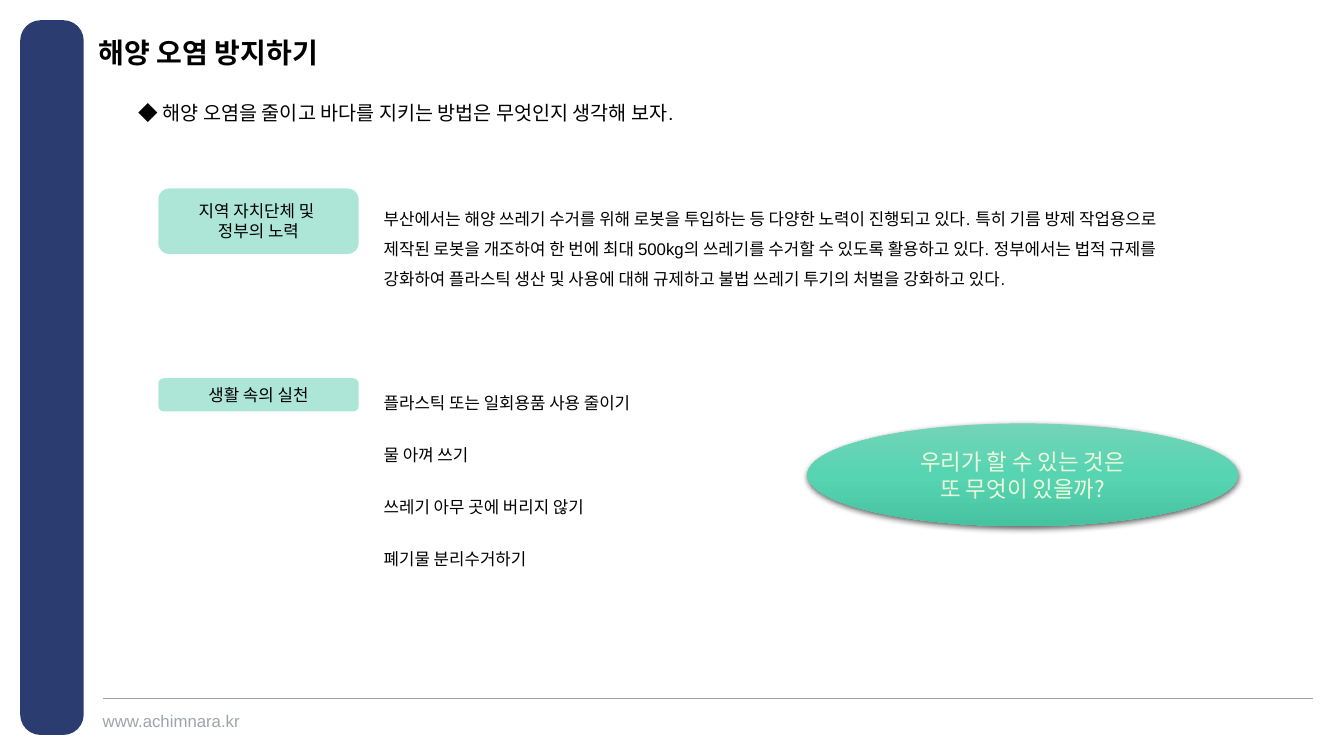
from lxml.etree import SubElement
from pptx import Presentation
from pptx.dml.color import RGBColor
from pptx.enum.shapes import MSO_CONNECTOR, MSO_SHAPE
from pptx.enum.text import MSO_ANCHOR, MSO_AUTO_SIZE, PP_ALIGN
from pptx.oxml.ns import qn
from pptx.util import Cm, Pt

COLOURS = {
    "navy": "2B3C71",
    "grey": "9EA4AA",
    "black": "000000",
    "mint": "5DCEAF",
    "cream": "EDFBDC",
    "oval_top": "73D4B8",
    "oval_middle": "57D4B2",
    "oval_bottom": "47C3A1",
}
KOREAN_FONT = "Noto Sans CJK KR"
HABITS = [
    "플라스틱 또는 일회용품 사용 줄이기",
    "물 아껴 쓰기",
    "쓰레기 아무 곳에 버리지 않기",
    "폐기물 분리수거하기",
]
EFFORTS = (
    "부산에서는 해양 쓰레기 수거를 위해 로봇을 투입하는 등 다양한 노력이 진행되고 있다. "
    "특히 기름 방제 작업용으로 제작된 로봇을 개조하여 한 번에 최대 500kg의 쓰레기를 "
    "수거할 수 있도록 활용하고 있다. 정부에서는 법적 규제를 강화하여 플라스틱 생산 및 "
    "사용에 대해 규제하고 불법 쓰레기 투기의 처벌을 강화하고 있다."
)


def colour(name):
    """Return the named palette colour."""
    return RGBColor.from_string(COLOURS[name])


def add_span(para, text, size, tone, font="Arial", bold=False):
    """Add one styled run to a paragraph."""
    span = para.add_run()
    span.text = text
    span.font.size = Pt(size)
    span.font.bold = bold
    span.font.color.rgb = colour(tone)
    span.font.name = font
    SubElement(span.font._element, qn("a:ea"), typeface=KOREAN_FONT)


def add_text(page, area, text, size, tone="black", spacing=1.5, inset=True, bold=False):
    """Add a wrapped text box holding one paragraph."""
    box = page.shapes.add_textbox(*map(Cm, area))
    frame = box.text_frame
    frame.word_wrap = True
    if inset:
        frame.auto_size = MSO_AUTO_SIZE.SHAPE_TO_FIT_TEXT
    else:
        frame.margin_left = frame.margin_right = frame.margin_top = frame.margin_bottom = 0
    para = frame.paragraphs[0]
    para.line_spacing = spacing
    add_span(para, text, size, tone, bold=bold)


def add_panel(page, kind, area, fill, lines=(), size=12, tone="black"):
    """Add a borderless filled shape with centred lines of text."""
    panel = page.shapes.add_shape(kind, *map(Cm, area))
    panel.shadow.inherit = False
    panel.fill.solid()
    panel.fill.fore_color.rgb = colour(fill)
    panel.line.fill.background()
    frame = panel.text_frame
    frame.word_wrap = True
    frame.vertical_anchor = MSO_ANCHOR.MIDDLE
    for index, line in enumerate(lines):
        para = frame.add_paragraph() if index else frame.paragraphs[0]
        para.alignment = PP_ALIGN.CENTER
        add_span(para, line, size, tone, KOREAN_FONT)
    return panel


def set_alpha(colour_element, percent):
    """Set the opacity of a colour element."""
    SubElement(colour_element, qn("a:alpha"), val=str(percent * 1000))


def add_tag(page, top, height, lines):
    """Add a half-transparent mint section tag."""
    tag = add_panel(page, MSO_SHAPE.ROUNDED_RECTANGLE, (3.99, top, 5.05, height), "mint", lines)
    set_alpha(tag._element.spPr.find(qn("a:solidFill")).find(qn("a:srgbClr")), 50)


def add_question(page, area, lines):
    """Add the shaded oval that poses the closing question."""
    oval = add_panel(page, MSO_SHAPE.OVAL, area, "oval_middle", lines, 16, "cream")
    oval.fill.gradient()
    oval.fill.gradient_angle = 270
    properties = oval._element.spPr
    stops = properties.find(qn("a:gradFill")).find(qn("a:gsLst"))
    for stop in list(stops):
        stops.remove(stop)
    for position, name in enumerate(("oval_top", "oval_middle", "oval_bottom")):
        stop = SubElement(stops, qn("a:gs"), pos=str(position * 50000))
        SubElement(stop, qn("a:srgbClr"), val=COLOURS[name])
    shadow = SubElement(
        properties.find(qn("a:effectLst")), qn("a:outerShdw"),
        blurRad=str(Pt(4.5)), dist=str(Pt(1.5)), dir="5400000", algn="ctr", rotWithShape="0",
    )
    set_alpha(SubElement(shadow, qn("a:srgbClr"), val=COLOURS["black"]), 63)


def add_rule(page, left, right, top):
    """Add the thin horizontal footer rule."""
    rule = page.shapes.add_connector(MSO_CONNECTOR.STRAIGHT, Cm(left), Cm(top), Cm(right), Cm(top))
    rule.line.color.rgb = colour("grey")
    rule.line.width = Pt(0.5)
    SubElement(rule._element.spPr, qn("a:effectLst"))


def main():
    """Build the slide and save the deck."""
    deck = Presentation()
    deck.slide_width, deck.slide_height = Cm(33.87), Cm(19.05)
    page = deck.slides.add_slide(deck.slide_layouts[6])

    sidebar = add_panel(page, MSO_SHAPE.ROUNDED_RECTANGLE, (0.51, 0.51, 1.6, 18.01), "navy")
    sidebar.adjustments[0] = 0.32
    add_rule(page, 2.59, 33.1, 17.6)
    add_text(page, (2.59, 17.91, 3.81, 0.51), "www.achimnara.kr", 12, "grey", 1.0, inset=False)

    add_text(page, (2.49, 0.99, 19.99, 0.71), "해양 오염 방지하기", 20,
             spacing=0.9, inset=False, bold=True)
    add_text(page, (3.25, 2.13, 21.13, 1.04),
             "◆ 해양 오염을 줄이고 바다를 지키는 방법은 무엇인지 생각해 보자.", 14)

    add_tag(page, 9.53, 0.84, ["생활 속의 실천"])
    for index, habit in enumerate(HABITS):
        add_text(page, (9.42, 9.53 + 1.31 * index, 8, 0.91), habit, 12)

    add_tag(page, 4.75, 1.65, ["지역 자치단체 및 ", "정부의 노력"])
    add_text(page, (9.42, 4.88, 21.13, 2.46), EFFORTS, 12)

    add_question(page, (20.35, 10.67, 10.85, 2.59), ["우리가 할 수 있는 것은", "또 무엇이 있을까?"])
    deck.save("out.pptx")


if __name__ == "__main__":
    main()
